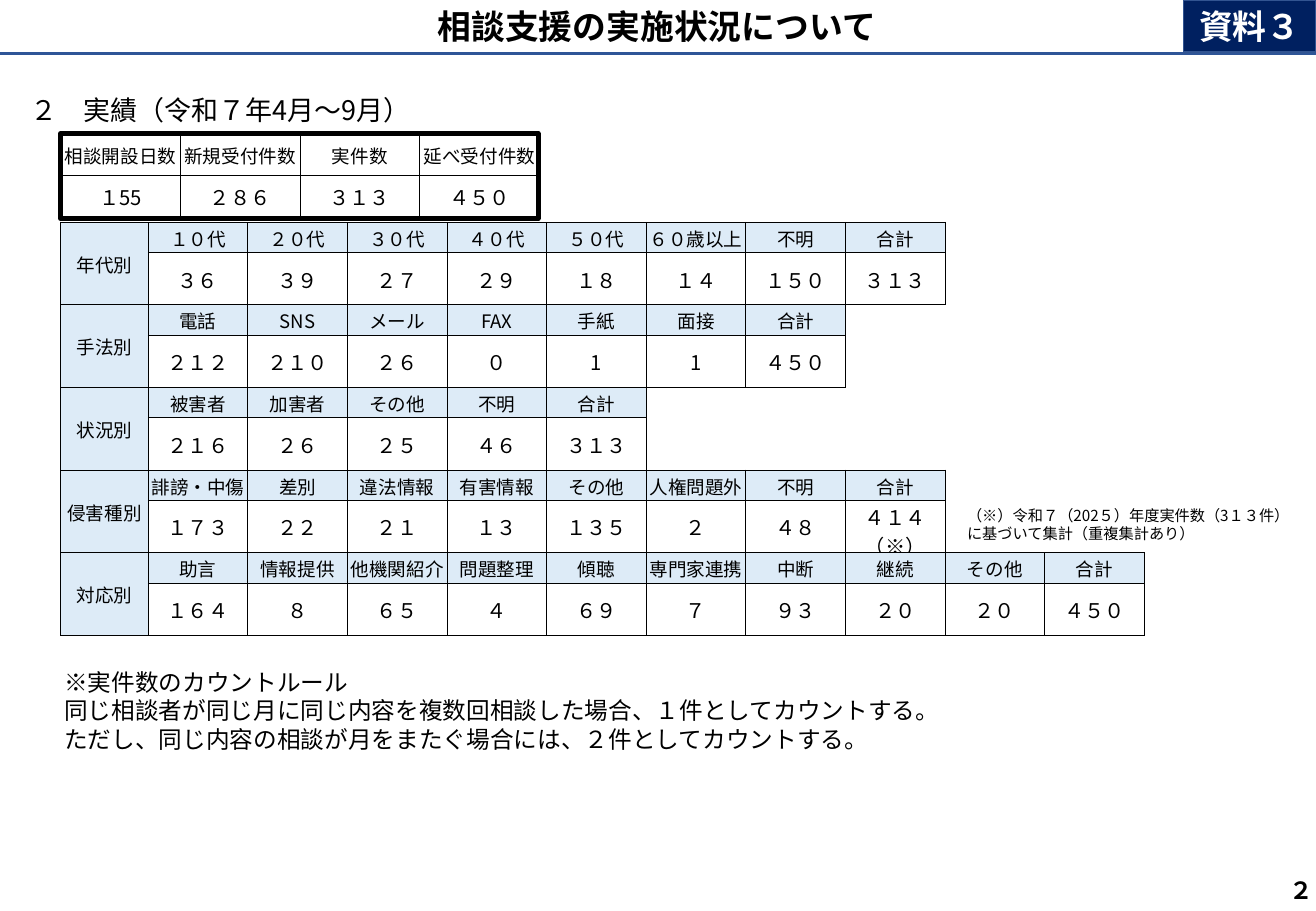
from lxml import etree
from pptx import Presentation
from pptx import util as u
from pptx.dml.color import RGBColor
from pptx.enum import shapes, text
from pptx.oxml import ns

FONT = "Noto Sans CJK JP"
COLORS = {
    "black": "000000",
    "white": "FFFFFF",
    "navy": "002060",
    "tag_line": "325491",
    "rule": "2F5597",
    "header": "DDEBF7",
}
NO_GRID_STYLE = "{2D5ABB26-0587-4C30-8999-92F81FD0307C}"
THIN, THICK = 0.5, 1.5

SUMMARY = [
    ["相談開設日数", "新規受付件数", "実件数", "延べ受付件数"],
    ["１55", "２８６", "３１３", "４５０"],
]
BREAKDOWN = [
    ("年代別",
     ["１０代", "２０代", "３０代", "４０代", "５０代", "６０歳以上", "不明", "合計"],
     ["３６", "３９", "２７", "２９", "１８", "１４", "１５０", "３１３"]),
    ("手法別",
     ["電話", "SNS", "メール", "FAX", "手紙", "面接", "合計"],
     ["２１２", "２１０", "２６", "０", "1", "1", "４５０"]),
    ("状況別",
     ["被害者", "加害者", "その他", "不明", "合計"],
     ["２１６", "２６", "２５", "４６", "３１３"]),
    ("侵害種別",
     ["誹謗・中傷", "差別", "違法情報", "有害情報", "その他", "人権問題外", "不明", "合計"],
     ["１７３", "２２", "２１", "１３", "１３５", "２", "４８", "４１４（※）"]),
    ("対応別",
     ["助言", "情報提供", "他機関紹介", "問題整理", "傾聴", "専門家連携", "中断", "継続",
      "その他", "合計"],
     ["１６４", "８", "６５", "４", "６９", "７", "９３", "２０", "２０", "４５０"]),
]
COUNT_RULE = [
    "※実件数のカウントルール",
    "同じ相談者が同じ月に同じ内容を複数回相談した場合、１件としてカウントする。",
    "ただし、同じ内容の相談が月をまたぐ場合には、２件としてカウントする。",
]
NOTE = ["（※）令和７（202５）年度実件数（3１３件）", "に基づいて集計（重複集計あり）"]


def color(name):
    return RGBColor.from_string(COLORS[name])


def style_paragraph(para, size, ink="black", bold=False, align=text.PP_ALIGN.LEFT):
    para.alignment = align
    font = para.font
    font.size = u.Pt(size)
    font.bold = bold
    font.color.rgb = color(ink)
    font.name = FONT
    defaults = para._p.pPr.find(ns.qn("a:defRPr"))
    etree.SubElement(defaults, ns.qn("a:ea"), typeface=FONT)


def place(shape, left, top, width, height):
    shape.left, shape.top = u.Inches(left), u.Inches(top)
    shape.width, shape.height = u.Inches(width), u.Inches(height)


def add_title(page, words):
    title = page.shapes.title
    place(title, 3.5, 0, 3.84, 0.44)
    frame = title.text_frame
    frame.text = words
    frame.word_wrap = False
    frame.auto_size = text.MSO_AUTO_SIZE.NONE
    frame.vertical_anchor = text.MSO_ANCHOR.TOP
    style_paragraph(frame.paragraphs[0], 20, bold=True)


def add_text(page, bounds, lines, size, bold=False, indent=0, wrap=True):
    box = page.shapes.add_textbox(*map(u.Inches, bounds))
    frame = box.text_frame
    frame.word_wrap = wrap
    frame.text = "\n".join(lines)
    align = text.PP_ALIGN.JUSTIFY if indent else text.PP_ALIGN.LEFT
    for para in frame.paragraphs:
        style_paragraph(para, size, bold=bold, align=align)
        if indent:
            para._p.pPr.set("marL", "0")
            para._p.pPr.set("indent", str(u.Inches(indent)))


def add_rectangle(page, bounds, line, weight, fill=None):
    box = page.shapes.add_shape(shapes.MSO_SHAPE.RECTANGLE, *map(u.Inches, bounds))
    box.shadow.inherit = False
    if fill:
        box.fill.solid()
        box.fill.fore_color.rgb = color(fill)
    else:
        box.fill.background()
    box.line.color.rgb = color(line)
    box.line.width = u.Pt(weight)
    return box


def add_tag(page, words):
    tag = add_rectangle(page, (9.74, 0, 1.09, 0.43), "tag_line", 1, "navy")
    frame = tag.text_frame
    frame.text = words
    frame.vertical_anchor = text.MSO_ANCHOR.MIDDLE
    style_paragraph(frame.paragraphs[0], 20, "white", True, text.PP_ALIGN.CENTER)


def add_rule(page, top, width):
    rule = page.shapes.add_connector(
        shapes.MSO_CONNECTOR.STRAIGHT, 0, u.Inches(top), u.Inches(width), u.Inches(top))
    rule.line.color.rgb = color("rule")
    rule.line.width = u.Pt(2.25)
    etree.SubElement(rule._element.spPr, ns.qn("a:effectLst"))


def set_borders(cell, left=THIN, right=THIN, top=THIN, bottom=THIN):
    properties = cell._tc.get_or_add_tcPr()
    for side, weight in zip("LRTB", (left, right, top, bottom)):
        edge = etree.SubElement(properties, ns.qn(f"a:ln{side}"), w=str(u.Pt(weight)))
        fill = etree.SubElement(edge, ns.qn("a:solidFill"))
        etree.SubElement(fill, ns.qn("a:srgbClr"), val=COLORS["black"])


def fill_cell(cell, words, size, fill=None):
    cell.margin_left = cell.margin_right = cell.margin_top = u.Inches(0.01)
    cell.margin_bottom = 0
    cell.vertical_anchor = text.MSO_ANCHOR.MIDDLE
    if fill:
        cell.fill.solid()
        cell.fill.fore_color.rgb = color(fill)
    else:
        cell.fill.background()
    cell.text = words
    para = cell.text_frame.paragraphs[0]
    style_paragraph(para, size, align=text.PP_ALIGN.CENTER)
    if not words:
        etree.SubElement(para._p, ns.qn("a:endParaRPr"), sz=str(size * 100))


def add_plain_table(page, bounds, row_heights, column_count):
    frame = page.shapes.add_table(len(row_heights), column_count, *map(u.Inches, bounds))
    table = frame.table
    table.first_row = table.horz_banding = False
    table._tbl.tblPr.find(ns.qn("a:tableStyleId")).text = NO_GRID_STYLE
    for row, height in zip(table.rows, row_heights):
        row.height = u.Inches(height)
    return table


def add_breakdown(page):
    table = add_plain_table(page, (0.5, 1.83, 8.92, 3.4), [0.25, 0.43] * len(BREAKDOWN), 11)
    for index, column in enumerate(table.columns):
        column.width = u.Inches(0.82 if index else 0.72)
    for group, (label, heads, counts) in enumerate(BREAKDOWN):
        top = group * 2
        rows = (([label] + heads, 11, "header"), ([""] + counts, 12, None))
        for offset, (values, size, fill) in enumerate(rows):
            for column in range(len(table.columns)):
                cell = table.cell(top + offset, column)
                used = column < len(values)
                if used:
                    set_borders(cell)
                shade = "header" if column == 0 else fill
                fill_cell(cell, values[column] if used else "", size,
                          shade if used else None)
        table.cell(top, 0).merge(table.cell(top + 1, 0))


def add_summary(page):
    last = len(SUMMARY[0]) - 1
    table = add_plain_table(page, (0.5, 1.11, 3.94, 0.68), [0.33, 0.35], last + 1)
    for row, values in enumerate(SUMMARY):
        for column, words in enumerate(values):
            cell = table.cell(row, column)
            set_borders(cell,
                        left=THIN if column else THICK,
                        right=THICK if column == last else THIN,
                        top=THIN if row else THICK,
                        bottom=THICK if row else THIN)
            fill_cell(cell, words, 12 if row else 11)
    add_rectangle(page, (0.5, 1.1, 3.93, 0.7), "black", 2.75)


def main():
    deck = Presentation()
    deck.slide_width, deck.slide_height = u.Inches(10.83), u.Inches(7.5)
    page = deck.slides.add_slide(deck.slide_layouts.get_by_name("Title Only"))
    add_title(page, "相談支援の実施状況について")
    add_text(page, (0, 0.72, 5.27, 0.37), ["２　実績（令和７年4月～9月）"], 16, indent=0.15)
    add_text(page, (10.51, 7.16, 0.35, 0.34), ["２"], 14, bold=True, wrap=False)
    add_rule(page, 0.44, 10.83)
    add_tag(page, "資料３")
    add_breakdown(page)
    add_summary(page)
    add_text(page, (0.28, 5.45, 9.99, 0.81), COUNT_RULE, 14, indent=0.15)
    add_text(page, (7.86, 4.12, 3.11, 0.4), NOTE, 9)
    deck.save("out.pptx")


if __name__ == "__main__":
    main()
